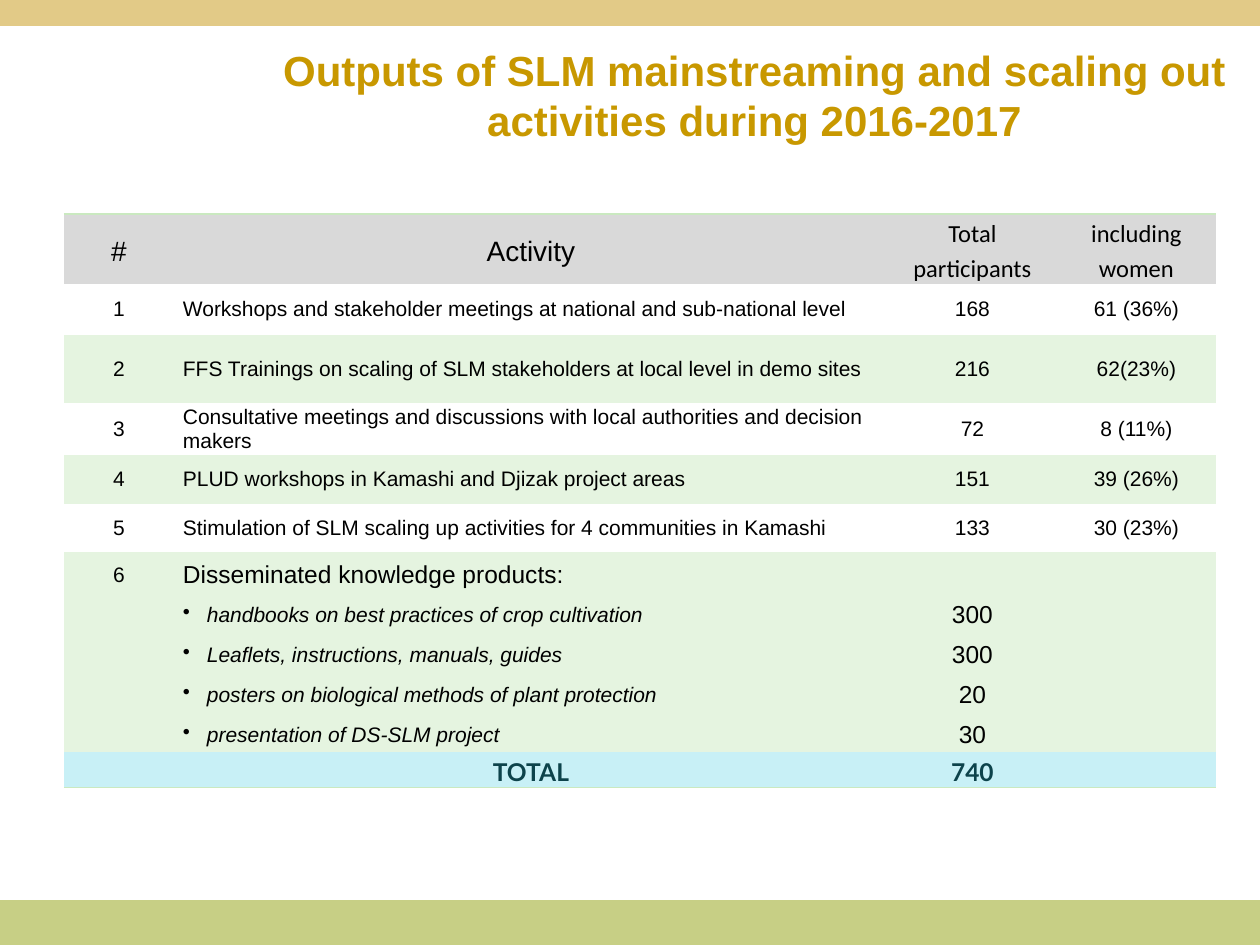
from pptx import Presentation
from pptx import util as u
from pptx.dml.color import RGBColor
from pptx.enum import shapes, text
from pptx.oxml import ns, xmlchemy

PX = 914400 / 126
NO_STYLE = "{2D5ABB26-0587-4C30-8999-92F81FD0307C}"
LEFT, CENTER = text.PP_ALIGN.LEFT, text.PP_ALIGN.CENTER

GRAY, GREEN, BLUE, EDGE = "D9D9D9", "E5F4E0", "C8F0F6", "CAE9C0"
BLACK, TEAL = "000000", "0D434B"

COLUMNS = [110, 714, 169, 159]
HEADER = ["#", "Activity", "Total\nparticipants", "including\nwomen"]
ACTIVITIES = [
    ("Workshops and stakeholder meetings at national and sub-national level", "168", "61 (36%)", 51),
    ("FFS Trainings on scaling of SLM stakeholders at local level in demo sites", "216", "62(23%)", 68),
    ("Consultative meetings and discussions with local authorities and decision makers", "72", "8 (11%)", 52),
    ("PLUD workshops in Kamashi and Djizak project areas", "151", "39 (26%)", 49),
    ("Stimulation of SLM scaling up activities for 4 communities in Kamashi", "133", "30 (23%)", 49),
]
PRODUCTS = [
    ("handbooks on best practices of crop cultivation", "300"),
    ("Leaflets, instructions, manuals, guides", "300"),
    ("posters on biological methods of plant protection", "20"),
    ("presentation of DS-SLM project", "30"),
]
HEADER_HEIGHT, PRODUCT_HEIGHT, TOTAL_HEIGHT = 69, 40, 35


def px(length):
    return u.Emu(round(length * PX))


def box(*lengths):
    return [px(length) for length in lengths]


def color(hex_code):
    return RGBColor.from_string(hex_code)


def add_bar(slide, top, height, fill):
    bar = slide.shapes.add_shape(shapes.MSO_SHAPE.RECTANGLE, *box(0, top, 1260, height))
    bar.shadow.inherit = False
    bar.fill.solid()
    bar.fill.fore_color.rgb = color(fill)
    bar.line.fill.background()


def style_font(font, size, name="Arial", hex_code=BLACK, bold=False, italic=False):
    font.size = u.Pt(size)
    font.name = name
    font.bold = bold
    font.italic = italic
    font.color.rgb = color(hex_code)


def add_title(slide, wording):
    title = slide.shapes.title
    title.left, title.top, title.width, title.height = box(263, 37, 983, 115)
    title.text_frame.text = wording
    title.text_frame.vertical_anchor = text.MSO_ANCHOR.MIDDLE
    paragraph = title.text_frame.paragraphs[0]
    paragraph.alignment = CENTER
    style_font(paragraph.runs[0].font, 24, hex_code="C89800", bold=True)


def add_bullet(paragraph):
    properties = paragraph._p.get_or_add_pPr()
    properties.set("marL", str(px(24)))
    properties.set("indent", str(-px(24)))
    bullet = xmlchemy.OxmlElement("a:buChar")
    bullet.set("char", "•")
    properties.append(bullet)


def add_edge(cell, tag):
    edge = xmlchemy.OxmlElement(tag)
    edge.set("w", str(u.Pt(1)))
    fill = xmlchemy.OxmlElement("a:solidFill")
    shade = xmlchemy.OxmlElement("a:srgbClr")
    shade.set("val", EDGE)
    fill.append(shade)
    edge.append(fill)
    cell._tc.get_or_add_tcPr().insert(0, edge)


def fill_cell(cell, wording, fill, size=12, align=CENTER, spacing=None, bullet=False, **font):
    cell.margin_left = cell.margin_right = px(9)
    cell.margin_top, cell.margin_bottom = px(1), 0
    cell.vertical_anchor = text.MSO_ANCHOR.MIDDLE
    if fill:
        cell.fill.solid()
        cell.fill.fore_color.rgb = color(fill)
    else:
        cell.fill.background()
    cell.text_frame.text = wording
    for paragraph in cell.text_frame.paragraphs:
        paragraph.alignment = align
        if spacing:
            paragraph.line_spacing = spacing
        if bullet:
            add_bullet(paragraph)
        if not wording:
            paragraph.font.size = u.Pt(size)
        for run in paragraph.runs:
            style_font(run.font, size, **font)


def fill_row(table, row, wordings, fill, formats, **shared):
    for column, (wording, cell_format) in enumerate(zip(wordings, formats)):
        fill_cell(table.cell(row, column), wording, fill, **{**shared, **cell_format})


def add_outputs_table(slide):
    heights = [HEADER_HEIGHT, *(activity[-1] for activity in ACTIVITIES),
               *[PRODUCT_HEIGHT] * (len(PRODUCTS) + 1), TOTAL_HEIGHT]
    frame = slide.shapes.add_table(len(heights), len(COLUMNS),
                                   *box(64, 214, sum(COLUMNS), sum(heights)))
    table = frame.table
    table.first_row = table.horz_banding = False
    table._tbl.tblPr.find(ns.qn("a:tableStyleId")).text = NO_STYLE
    for column, width in zip(table.columns, COLUMNS):
        column.width = px(width)
    for row, height in zip(table.rows, heights):
        row.height = px(height)

    # Header
    large, small = {"size": 16}, {"size": 14, "name": "Calibri"}
    fill_row(table, 0, HEADER, GRAY, [large, large, small, small], spacing=1.15)

    # Numbered activities, every second one shaded
    for number, (activity, total, women, _) in enumerate(ACTIVITIES, 1):
        fill_row(table, number, [str(number), activity, total, women],
                 None if number % 2 else GREEN, [{}, {"align": LEFT}, {}, {}])

    # Knowledge products
    heading = len(ACTIVITIES) + 1
    fill_row(table, heading, [str(heading), "Disseminated knowledge products:", "", ""],
             GREEN, [{}, {"size": 14, "align": LEFT}, {}, {}], spacing=1.15)
    product_format = {"align": LEFT, "bullet": True, "italic": True}
    for row, (product, copies) in enumerate(PRODUCTS, heading + 1):
        fill_row(table, row, ["", product, copies, ""], GREEN,
                 [{}, product_format, {"size": 14}, {}], spacing=1.15)

    # Total
    last = len(heights) - 1
    fill_row(table, last, ["", "TOTAL", "740", ""], BLUE, [{}] * 4, size=14,
             spacing=1.15, name="Lato", hex_code=TEAL, bold=True)

    # Outer edges
    for column in range(len(COLUMNS)):
        add_edge(table.cell(0, column), "a:lnT")
        add_edge(table.cell(last, column), "a:lnB")


def main():
    deck = Presentation()
    deck.slide_width, deck.slide_height = box(1260, 945)
    slide = deck.slides.add_slide(deck.slide_layouts[5])
    add_bar(slide, 900, 45, "C7CF85")
    add_bar(slide, 0, 26, "E2CA87")
    add_title(slide, "Outputs of SLM mainstreaming and scaling out activities during 2016-2017")
    add_outputs_table(slide)
    deck.save("out.pptx")


if __name__ == "__main__":
    main()
